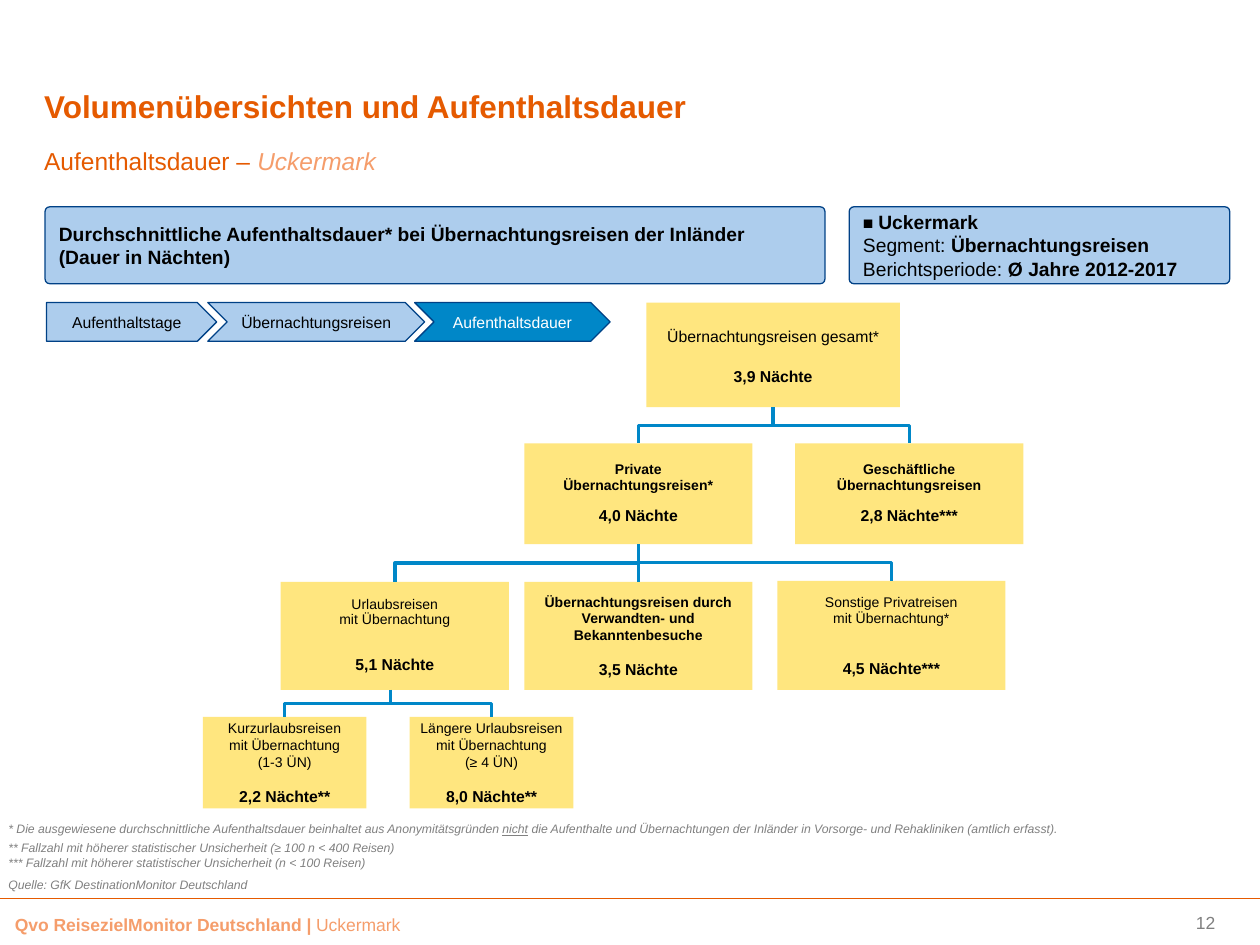
from copy import deepcopy
from dataclasses import dataclass

from lxml.etree import SubElement
from pptx import Presentation
from pptx.dml.color import RGBColor as RGB
from pptx.enum.shapes import MSO_CONNECTOR as CONN, MSO_SHAPE as SHAPE
from pptx.enum.text import MSO_ANCHOR as ANCHOR, MSO_AUTO_SIZE as AUTO, PP_ALIGN as ALIGN
from pptx.oxml.ns import qn
from pptx.util import Cm, Pt


@dataclass(frozen=True)
class Theme:
    font: str = "Arial"
    orange: str = "E55A00"
    peach: str = "F59D6B"
    sky: str = "ADCDED"
    navy: str = "004186"
    blue: str = "0087C8"
    yellow: str = "FFE67F"
    black: str = "000000"
    white: str = "FFFFFF"
    gray: str = "808080"
    title: int = 18
    subtitle: int = 14
    header: int = 11
    footer: int = 10
    value: int = 9
    label: int = 8
    note: int = 7


T = Theme()


def write(p, text, size, color=T.black, bold=False, italic=False, underline=False):
    for i, line in enumerate(text.split("\n")):
        if i:
            p.add_line_break()
        r = p.add_run()
        r.text = line
        f = r.font
        f.name, f.size, f.bold, f.italic = T.font, Pt(size), bold, italic
        if underline:
            f.underline = True
        f.color.rgb = RGB.from_string(color)
        if i:
            p._p.findall(qn("a:br"))[-1].append(deepcopy(r._r.rPr))


def frame(sp, inset_x=0, inset_y=0, anchor=ANCHOR.MIDDLE, align=ALIGN.LEFT):
    tf = sp.text_frame
    tf.word_wrap, tf.auto_size, tf.vertical_anchor = True, AUTO.NONE, anchor
    tf.margin_left = tf.margin_right = Cm(inset_x)
    tf.margin_top = tf.margin_bottom = Cm(inset_y)
    tf.paragraphs[0].alignment = align
    return tf


prs = Presentation()
prs.slide_width, prs.slide_height = Cm(25.4), Cm(19.05)
s = prs.slides.add_slide(prs.slide_layouts[1])

title, body = s.placeholders
title.left, title.top, title.width, title.height = Cm(0.89), Cm(0.71), Cm(17.6), Cm(1.8)
p = frame(title, anchor=ANCHOR.BOTTOM).paragraphs[0]
write(p, "Volumenübersichten und Aufenthaltsdauer", T.title, T.orange, bold=True)

body.left, body.top, body.width, body.height = Cm(0.89), Cm(2.95), Cm(23.6), Cm(0.79)
p = frame(body, anchor=ANCHOR.TOP).paragraphs[0]
pPr = p._p.get_or_add_pPr()
pPr.set("marL", "0")
pPr.set("indent", "0")
SubElement(pPr, qn("a:buNone"))
p.space_before = Pt(0)
write(p, "Aufenthaltsdauer – ", T.subtitle, T.orange)
write(p, "Uckermark", T.subtitle, T.peach, italic=True)

headers = [
    (0.91, 15.72, [[("Durchschnittliche Aufenthaltsdauer* bei Übernachtungsreisen der Inländer\n"
                     "(Dauer in Nächten)", T.header, True)]]),
    (17.12, 7.67, [[("■ ", T.footer, True), ("Uckermark", T.header, True)],
                   [("Segment: ", T.header, False), ("Übernachtungsreisen", T.header, True)],
                   [("Berichtsperiode: ", T.header, False),
                    ("Ø Jahre 2012-2017", T.header, True)]]),
]
for x, w, lines in headers:
    sp = s.shapes.add_shape(SHAPE.ROUNDED_RECTANGLE, Cm(x), Cm(4.17), Cm(w), Cm(1.55))
    sp.adjustments[0] = 0.06
    sp.shadow.inherit = False
    sp.fill.solid()
    sp.fill.fore_color.rgb = RGB.from_string(T.sky)
    sp.line.color.rgb = RGB.from_string(T.navy)
    sp.line.width = Pt(0.75)
    tf = frame(sp, 0.25, 0.13)
    for i, line in enumerate(lines):
        p = tf.add_paragraph() if i else tf.paragraphs[0]
        p.alignment = ALIGN.LEFT
        for text, size, bold in line:
            write(p, text, size, bold=bold)

steps = [
    ("Aufenthaltstage", SHAPE.PENTAGON, 0.94, 3.43, T.sky, T.black),
    ("Übernachtungsreisen", SHAPE.CHEVRON, 4.19, 4.37, T.sky, T.black),
    ("Aufenthaltsdauer", SHAPE.CHEVRON, 8.36, 3.94, T.blue, T.white),
]
for text, kind, x, w, fill, color in steps:
    sp = s.shapes.add_shape(kind, Cm(x), Cm(6.1), Cm(w), Cm(0.78))
    sp.shadow.inherit = False
    sp.fill.solid()
    sp.fill.fore_color.rgb = RGB.from_string(fill)
    sp.line.color.rgb = RGB.from_string(T.navy)
    sp.line.width = Pt(0.75)
    write(frame(sp, align=ALIGN.CENTER).paragraphs[0], text, T.value, color)

nodes = {
    "total": (13.03, 6.1, 5.11, 2.11, "Übernachtungsreisen gesamt*", T.value, False,
              "3,9 Nächte", 1.14, 10.5),
    "private": (10.57, 8.94, 4.6, 2.03, "Private\nÜbernachtungsreisen*", T.label, True,
                "4,0 Nächte", 0.9, 8.3),
    "business": (16.03, 8.94, 4.6, 2.03, "Geschäftliche Übernachtungsreisen", T.label, True,
                 "2,8 Nächte***", 0.9, 8.3),
    "holiday": (5.66, 11.73, 4.6, 2.18, "Urlaubsreisen\nmit Übernachtung", T.label, False,
                "5,1 Nächte", 0.9, 16.6),
    "family": (10.57, 11.73, 4.6, 2.18,
               "Übernachtungsreisen durch Verwandten- und Bekanntenbesuche", T.label, True,
               "3,5 Nächte", 1.0, 9.2),
    "other": (15.67, 11.71, 4.6, 2.2, "Sonstige Privatreisen\nmit Übernachtung*", T.label, False,
              "4,5 Nächte***", 1.0, 18.4),
    "short": (4.09, 14.45, 3.3, 1.85, "Kurzurlaubsreisen\nmit Übernachtung\n(1-3 ÜN)", T.label,
              False, "2,2 Nächte**", 1.0, 9.2),
    "long": (8.26, 14.45, 3.3, 1.85, "Längere Urlaubsreisen mit Übernachtung\n(≥ 4 ÜN)", T.label,
             False, "8,0 Nächte**", 1.0, 9.2),
}
boxes = {}
for name, (x, y, w, h, label, size, bold, value, spacing, gap) in nodes.items():
    sp = boxes[name] = s.shapes.add_shape(SHAPE.RECTANGLE, Cm(x), Cm(y), Cm(w), Cm(h))
    sp.shadow.inherit = False
    sp.fill.solid()
    sp.fill.fore_color.rgb = RGB.from_string(T.yellow)
    sp.line.fill.background()
    tf = frame(sp, 0.08, 0.08, align=ALIGN.CENTER)
    p = tf.paragraphs[0]
    p.line_spacing = spacing
    write(p, label, size, bold=bold)
    p = tf.add_paragraph()
    p.alignment, p.line_spacing, p.space_before = ALIGN.CENTER, spacing, Pt(gap)
    write(p, value, T.value, bold=True)

branches = [("total", "private", 0), ("total", "business", 0), ("private", "holiday", 0),
            ("private", "other", 0), ("holiday", "short", -0.09), ("holiday", "long", -0.09)]
for parent, child, shift in branches:
    a, b = boxes[parent], boxes[child]
    x1, y1 = a.left + a.width // 2 + Cm(shift), a.top + a.height
    x2, y2 = b.left + b.width // 2, b.top
    mid = (y1 + y2) // 2
    path_builder = s.shapes.build_freeform(x1, y1, scale=1.0)
    path_builder.add_line_segments([(x1, mid), (x2, mid), (x2, y2)], close=False)
    sp = path_builder.convert_to_shape()
    sp.shadow.inherit = False
    sp.fill.background()
    sp.line.color.rgb = RGB.from_string(T.blue)
    sp.line.width = Pt(2)

stem = s.shapes.add_connector(CONN.STRAIGHT, 0, 0, 0, 0)
stem.begin_connect(boxes["private"], 2)
stem.end_connect(boxes["family"], 0)
rule = s.shapes.add_connector(CONN.STRAIGHT, 0, Cm(18.11), prs.slide_width, Cm(18.11))
for line, color, width in [(stem, T.blue, 2), (rule, T.orange, 0.55)]:
    line.line.color.rgb = RGB.from_string(color)
    line.line.width = Pt(width)
    SubElement(line._element.spPr, qn("a:effectLst"))

notes = [
    (16.43, 23, 0.56, [("* Die ausgewiesene durchschnittliche Aufenthaltsdauer beinhaltet aus "
                        "Anonymitätsgründen ", False), ("nicht", True),
                       (" die Aufenthalte und Übernachtungen der Inländer in Vorsorge- und "
                        "Rehakliniken (amtlich erfasst).", False)]),
    (16.81, 12.8, 0.9, [("** Fallzahl mit höherer statistischer Unsicherheit (≥ 100 n < 400 Reisen)\n"
                         "*** Fallzahl mit höherer statistischer Unsicherheit (n < 100 Reisen)",
                         False)]),
    (17.55, 12, 0.58, [("Quelle: GfK DestinationMonitor Deutschland", False)]),
]
for y, w, h, runs in notes:
    sp = s.shapes.add_textbox(0, Cm(y), Cm(w), Cm(h))
    p = frame(sp, 0.17, 0.13, ANCHOR.TOP).paragraphs[0]
    for text, underline in runs:
        write(p, text, T.note, T.gray, italic=True, underline=underline)

sp = s.shapes.add_textbox(Cm(0.05), Cm(18.29), Cm(17.1), Cm(0.69))
p = frame(sp, 0.25, 0.13, ANCHOR.TOP).paragraphs[0]
write(p, "Qvo ReisezielMonitor Deutschland | ", T.footer, T.peach, bold=True)
write(p, "Uckermark", T.footer, T.peach)

sp = s.shapes.add_textbox(Cm(20.9), Cm(18.39), Cm(3.6), Cm(0.41))
write(frame(sp, align=ALIGN.RIGHT).paragraphs[0], "12", T.footer, T.gray)

prs.save("out.pptx")
